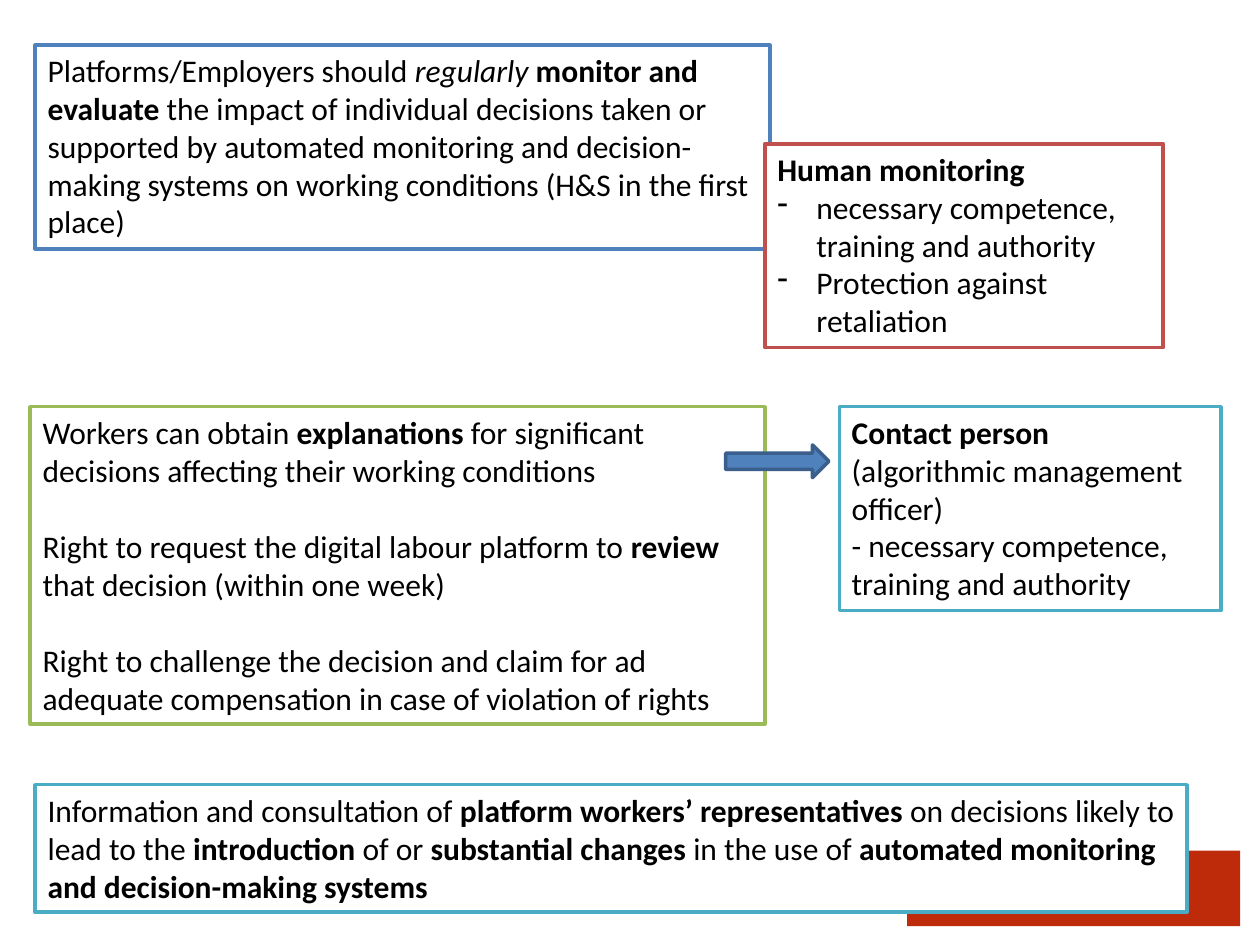
from lxml import etree
from pptx import Presentation
from pptx import util as u
from pptx.dml.color import RGBColor
from pptx.enum import shapes, text
from pptx.oxml.ns import qn

COLORS = {"white": "FFFFFF", "black": "000000", "blue": "4F81BD", "navy": "3A5F8C",
          "red": "C0504D", "green": "9BBB59", "teal": "4BACC6", "accent": "BD2B0B"}
FONT, SIZE = "Calibri", 18
LINE_HEIGHT = 22  # points, one empty line between separate rights
DASH_INDENT = 0.79

# Content: each paragraph is a list of (text, style); style is "", "b" or "i"
MONITOR = [[("Platforms/Employers should ", ""), ("regularly ", "i"),
            ("monitor and evaluate ", "b"),
            ("the impact of individual decisions taken or supported by automated "
             "monitoring and decision-making systems on working conditions "
             "(H&S in the first place)", "")]]
HUMAN = [[("Human monitoring", "b")],
         [("necessary competence, training and authority", "")],
         [("Protection against retaliation", "")]]
RIGHTS = [[("Workers can obtain ", ""), ("explanations ", "b"),
           ("for significant decisions affecting their working conditions", "")],
          [("Right to request the digital labour platform to ", ""), ("review ", "b"),
           ("that decision (within one week)", "")],
          [("Right to challenge the decision and claim for ad adequate compensation "
            "in case of violation of rights", "")]]
CONTACT = [[("Contact person ", "b"), ("(algorithmic management officer)", "")],
           [("- necessary competence, training and authority", "")]]
CONSULTATION = [[("Information and consultation of ", ""),
                 ("platform workers’ representatives ", "b"),
                 ("on decisions likely to lead to the ", ""), ("introduction ", "b"),
                 ("of or ", ""), ("substantial changes ", "b"), ("in the use of ", ""),
                 ("automated monitoring and decision-making systems", "b")]]

# Layout in centimetres
LEFT, WIDE, TALL, ROW = 0.71, 14.81, 4.11, 8.2
FRAMES = [
    (MONITOR, (LEFT, 0.91, WIDE, TALL), "blue", {}),
    (HUMAN, (15.42, 2.9, 8.03, TALL), "red", {"dashes": True}),
    (RIGHTS, (0.61, ROW, WIDE, 6.4), "green", {"gap": LINE_HEIGHT}),
    (CONTACT, (16.92, ROW, 7.7, TALL), "teal", {}),
    (CONSULTATION, (LEFT, 15.82, 23.22, 2.57), "teal", {}),
]
ARROW = (14.63, 8.97, 2.08, 0.66)
CORNER = (18.29, 17.15, 6.71, 1.52)


def color(name):
    return RGBColor.from_string(COLORS[name])


def add_block(page, place, fill, line=None, kind=shapes.MSO_SHAPE.RECTANGLE):
    box = page.shapes.add_shape(kind, *map(u.Cm, place))
    box.shadow.inherit = False
    box.fill.solid()
    box.fill.fore_color.rgb = color(fill)
    if line:
        box.line.color.rgb = color(line)
        box.line.width = u.Pt(2)
    else:
        box.line.fill.background()
    return box


def add_dash(para):
    properties = para._p.get_or_add_pPr()
    indent = u.Cm(DASH_INDENT)
    properties.set("marL", str(indent))
    properties.set("indent", str(-indent))
    etree.SubElement(properties, qn("a:buFontTx"))
    etree.SubElement(properties, qn("a:buChar")).set("char", "-")


def write(box, paragraphs, gap=0, dashes=False):
    frame = box.text_frame
    frame.word_wrap = True
    frame.vertical_anchor = text.MSO_ANCHOR.TOP
    frame.auto_size = text.MSO_AUTO_SIZE.SHAPE_TO_FIT_TEXT
    for index, pieces in enumerate(paragraphs):
        para = frame.add_paragraph() if index else frame.paragraphs[0]
        para.alignment = text.PP_ALIGN.LEFT
        if index and gap:
            para.space_before = u.Pt(gap)
        if index and dashes:
            add_dash(para)
        for words, style in pieces:
            span = para.add_run()
            span.text = words
            span.font.name, span.font.size = FONT, u.Pt(SIZE)
            span.font.color.rgb = color("black")
            span.font.bold = style == "b"
            span.font.italic = style == "i"


def main():
    deck = Presentation()
    deck.slide_width, deck.slide_height = u.Cm(25.4), u.Cm(19.05)
    page = deck.slides.add_slide(deck.slide_layouts[6])

    # Corner block behind everything
    add_block(page, CORNER, "accent")

    # Framed texts
    for paragraphs, place, line, options in FRAMES:
        write(add_block(page, place, "white", line), paragraphs, **options)

    # Arrow from the workers' rights to the contact person
    add_block(page, ARROW, "blue", "navy", shapes.MSO_SHAPE.RIGHT_ARROW)

    deck.save("out.pptx")


if __name__ == "__main__":
    main()
